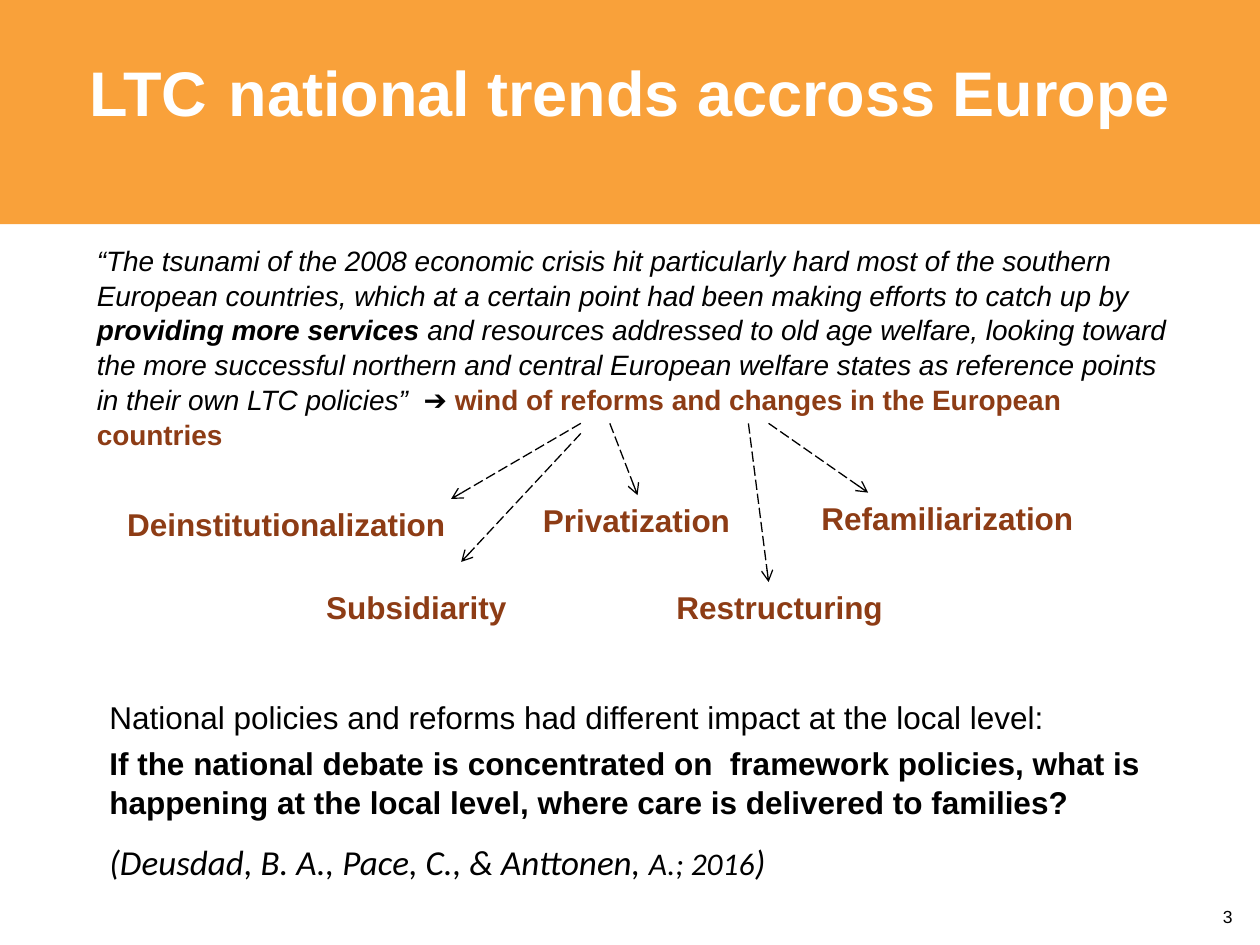
from dataclasses import dataclass, field
from typing import Any

from lxml.etree import SubElement
from pptx import Presentation
from pptx.dml.color import RGBColor
from pptx.enum.dml import MSO_LINE
from pptx.enum.shapes import MSO_CONNECTOR, MSO_SHAPE
from pptx.enum.text import MSO_ANCHOR, MSO_AUTO_SIZE as AUTO, PP_ALIGN as ALIGN
from pptx.oxml.ns import qn
from pptx.util import Inches, Pt

ORANGE = RGBColor(0xF9, 0xA1, 0x3A)
BROWN = RGBColor(0x8D, 0x3C, 0x15)
WHITE = RGBColor(0xFF, 0xFF, 0xFF)
BLACK = RGBColor(0x00, 0x00, 0x00)


@dataclass
class Run:
    text: str
    size: float
    color: RGBColor = BLACK
    style: dict[str, Any] = field(default_factory=dict)


@dataclass
class Label:
    text: str
    left: float
    top: float
    width: float


@dataclass
class Arrow:
    x1: float
    y1: float
    x2: float
    y2: float


BOLD = {"bold": True}
ITALIC = {"italic": True}
CITATION = {"italic": True, "name": "Calibri"}

TITLE = [[
    Run("LTC", 36, WHITE, BOLD),
    Run(" ", 44),
    Run("national trends accross Europe", 36, WHITE, BOLD),
]]
QUOTE = [[
    Run("“The tsunami of the 2008 economic crisis hit particularly hard most of "
        "the southern European countries, which at a certain point had been "
        "making efforts to catch up by ", 16, style=ITALIC),
    Run("providing more services ", 16, style=BOLD | ITALIC),
    Run("and resources addressed to old age welfare, looking toward the more "
        "successful northern and central European welfare states as reference "
        "points in their own LTC policies”  ➔ ", 16, style=ITALIC),
    Run("wind of reforms and changes in the European countries", 16, BROWN, BOLD),
]]
IMPACT = [
    [Run("National policies and reforms had different impact at the local level:", 18)],
    [Run("If the national debate is concentrated on  framework policies, what is "
         "happening at the local level, where care is delivered to families?",
         18, style=BOLD)],
]
REFERENCE = [[
    Run("(Deusdad, B. A., Pace, C., & Anttonen, ", 20, style=CITATION),
    Run("A.; 2016", 18, style=CITATION),
    Run(")", 20, style=CITATION),
]]

LABELS = [
    Label("Deinstitutionalization", 0.91, 3.96, 2.75),
    Label("Privatization", 4.21, 3.93, 1.69),
    Label("Refamiliarization", 6.42, 3.91, 2.22),
    Label("Restructuring", 5.27, 4.62, 1.86),
    Label("Subsidiarity", 2.49, 4.62, 1.65),
]
ARROWS = [
    Arrow(4.61, 3.36, 3.58, 3.96),
    Arrow(4.84, 3.36, 5.06, 3.93),
    Arrow(6.1, 3.36, 6.89, 3.91),
    Arrow(5.94, 3.36, 6.1, 4.62),
    Arrow(4.61, 3.44, 3.66, 4.46),
]


def write(sp, paragraphs: list[list[Run]], align=ALIGN.LEFT, spacing: float = 1.0,
          gap: float = 0, wrap: bool = True, auto=AUTO.NONE) -> None:
    tf = sp.text_frame
    frame = {"word_wrap": wrap, "auto_size": auto, "vertical_anchor": MSO_ANCHOR.TOP}
    for name, value in frame.items():
        setattr(tf, name, value)
    for i, runs in enumerate(paragraphs):
        p = tf.add_paragraph() if i else tf.paragraphs[0]
        layout = {"alignment": align, "line_spacing": spacing,
                  "space_before": Pt(gap if i else 0)}
        for name, value in layout.items():
            setattr(p, name, value)
        for run in runs:
            r = p.add_run()
            r.text = run.text
            font = {"name": "Arial", "size": Pt(run.size), "bold": False,
                    "italic": False} | run.style
            for name, value in font.items():
                setattr(r.font, name, value)
            r.font.color.rgb = run.color


def add_text(s, left: float, top: float, width: float, height: float,
             paragraphs: list[list[Run]], **options: Any) -> None:
    sp = s.shapes.add_textbox(Inches(left), Inches(top), Inches(width), Inches(height))
    write(sp, paragraphs, **options)


def add_title(s) -> None:
    sp = s.shapes.title
    box = {"left": 0.5, "top": 0.21, "width": 9, "height": 1.25}
    for name, value in box.items():
        setattr(sp, name, Inches(value))
    write(sp, TITLE, align=ALIGN.CENTER)
    sp.text_frame.margin_top = Inches(0.1)


def add_band(s) -> None:
    sp = s.shapes.add_shape(MSO_SHAPE.RECTANGLE, 0, 0, Inches(10), Inches(1.78))
    sp.shadow.inherit = False
    sp.fill.solid()
    sp.fill.fore_color.rgb = ORANGE
    sp.line.fill.background()
    s.shapes._spTree.insert(2, sp._element)


def add_arrow(s, a: Arrow) -> None:
    cx = s.shapes.add_connector(MSO_CONNECTOR.STRAIGHT, Inches(a.x1), Inches(a.y1),
                                Inches(a.x2), Inches(a.y2))
    cx.line.color.rgb = BLACK
    cx.line.width = Pt(0.75)
    cx.line.dash_style = MSO_LINE.LONG_DASH
    SubElement(cx.line._get_or_add_ln(), qn("a:tailEnd"), type="arrow")
    SubElement(cx._element.spPr, qn("a:effectLst"))


def main() -> None:
    prs = Presentation()
    prs.slide_width, prs.slide_height = Inches(10), Inches(7.5)
    s = prs.slides.add_slide(prs.slide_layouts[5])
    add_band(s)
    add_title(s)
    add_text(s, 0.67, 1.87, 8.83, 4.95, QUOTE, spacing=1.04)
    for label in LABELS:
        add_text(s, label.left, label.top, label.width, 0.4,
                 [[Run(label.text, 18, BROWN, BOLD)]],
                 wrap=False, auto=AUTO.SHAPE_TO_FIT_TEXT)
    for arrow in ARROWS:
        add_arrow(s, arrow)
    add_text(s, 0.77, 5.48, 8.83, 1.1, IMPACT, spacing=1.04, gap=3.6)
    add_text(s, 0.77, 6.62, 6.67, 0.44, REFERENCE, auto=AUTO.SHAPE_TO_FIT_TEXT)
    add_text(s, 8.44, 7.14, 1.44, 0.24, [[Run("3", 10)]], align=ALIGN.RIGHT)
    prs.save("out.pptx")


if __name__ == "__main__":
    main()
